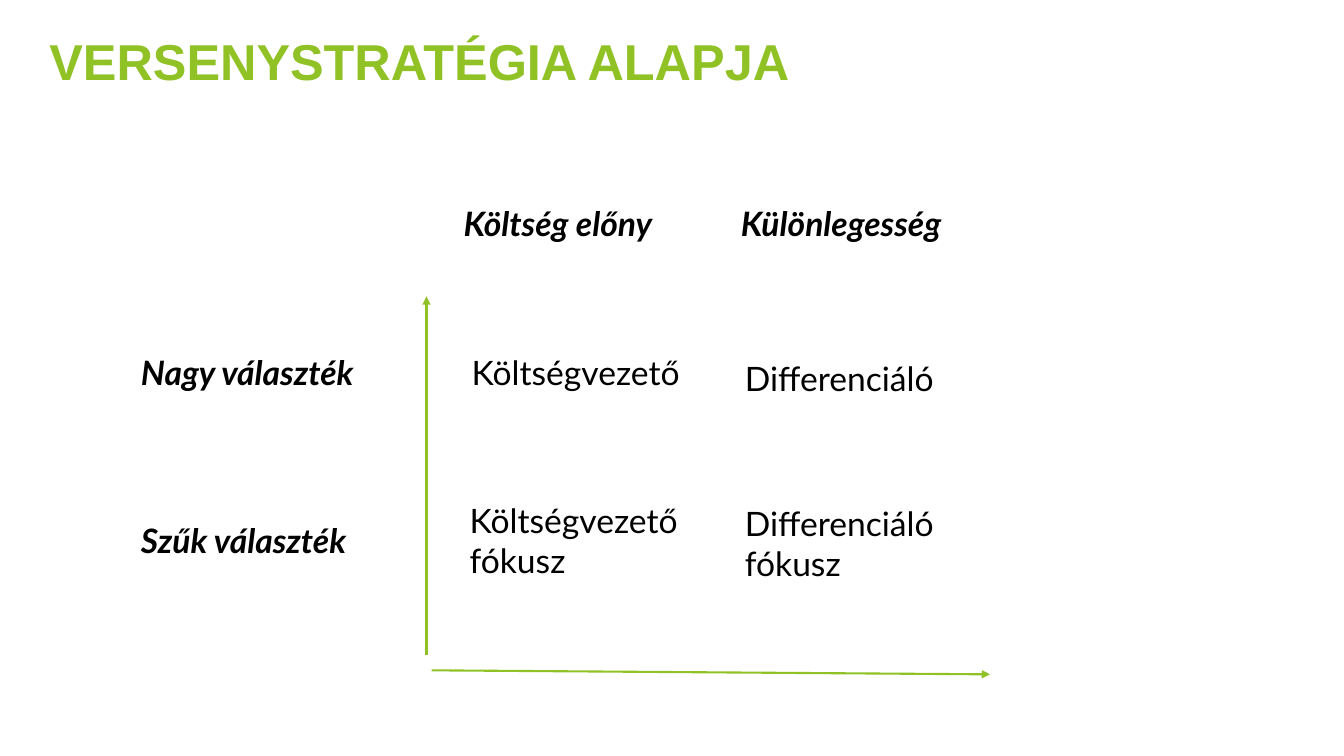
from lxml.etree import SubElement
from pptx import Presentation
from pptx.dml.color import RGBColor
from pptx.enum.shapes import MSO_CONNECTOR as Connector
from pptx.enum.text import MSO_ANCHOR as Anchor, MSO_AUTO_SIZE as AutoSize, PP_ALIGN as Align
from pptx.oxml.ns import qn
from pptx.util import Pt

PX = 9144
COLORS = {"green": "90C226", "black": "000000"}
LINE_HEIGHT = 41
HEADINGS = [
    ("Költség előny", 320, 0, 236),
    ("Különlegesség", 595, 0, 244),
    ("Nagy választék", 0, 148, 282),
    ("Szűk választék", 0, 315, 293),
]
STRATEGIES = [
    ("Költségvezető", 328, 148),
    ("Differenciáló", 599, 154),
    ("Költségvezető\nfókusz", 326, 295),
    ("Differenciáló\nfókusz", 599, 298),
]
AXES = [
    ((293, 454), (293, 98)),
    ((298, 469), (852, 473)),
]


def px(*lengths):
    return [round(length * PX) for length in lengths]


def style_text(frame, font_name, size, color, bold=False, italic=False):
    for paragraph in frame.paragraphs:
        paragraph.alignment = Align.LEFT
        for run in paragraph.runs:
            font = run.font
            font.name, font.size = font_name, Pt(size)
            font.bold, font.italic = bold, italic
            font.color.rgb = RGBColor.from_string(COLORS[color])


def add_title(slide, left, top, width, height):
    title = slide.shapes.title
    title.left, title.top, title.width, title.height = px(left, top, width, height)
    frame = title.text_frame
    frame.text = "VERSENYSTRATÉGIA ALAPJA"
    frame.margin_left = frame.margin_right = frame.margin_top = frame.margin_bottom = 0
    frame.vertical_anchor = Anchor.TOP
    frame.auto_size = AutoSize.NONE
    style_text(frame, "Arial", 36, "green", bold=True)


def add_label(slide, text, left, top, width, emphasis=False):
    height = 9 + LINE_HEIGHT * len(text.splitlines())
    label = slide.shapes.add_textbox(*px(left, top, width, height))
    frame = label.text_frame
    frame.word_wrap = True
    frame.auto_size = AutoSize.SHAPE_TO_FIT_TEXT
    frame.text = text
    style_text(frame, "Lato", 24, "black", bold=emphasis, italic=emphasis)


def add_axis(slide, start, end):
    axis = slide.shapes.add_connector(Connector.STRAIGHT, *px(*start, *end))
    axis.line.color.rgb = RGBColor.from_string(COLORS["green"])
    axis.line.width = Pt(1.5)
    SubElement(axis.line._get_or_add_ln(), qn("a:tailEnd"), type="triangle")
    SubElement(axis._element.spPr, qn("a:effectLst"))


def add_strategy_matrix(slide, left, top):
    for text, x, y, width in HEADINGS:
        add_label(slide, text, left + x, top + y, width, emphasis=True)
    for text, x, y in STRATEGIES:
        add_label(slide, text, left + x, top + y, 236)
    for axis in AXES:
        start, end = [(left + x, top + y) for x, y in axis]
        add_axis(slide, start, end)


def main():
    deck = Presentation()
    deck.slide_width, deck.slide_height = px(1333, 750)
    slide = deck.slides.add_slide(deck.slide_layouts[5])
    add_title(slide, 49, 30, 1235, 40)
    add_strategy_matrix(slide, 130, 196)
    deck.save("out.pptx")


if __name__ == "__main__":
    main()
